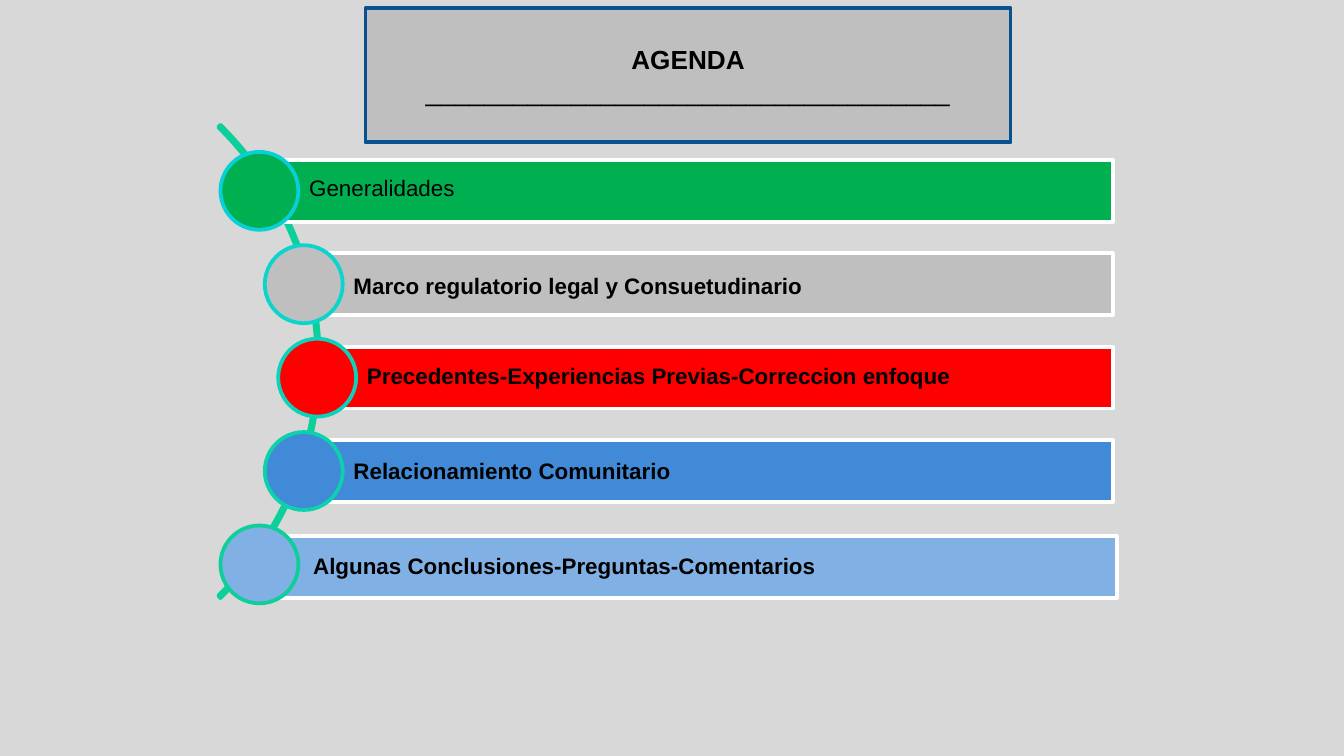
import pptx
import pptx.util
import pptx.dml.color
import pptx.enum.shapes
import pptx.enum.text

Inches = pptx.util.Inches
Pt = pptx.util.Pt
RGBColor = pptx.dml.color.RGBColor
SHAPE = pptx.enum.shapes.MSO_SHAPE
ALIGN = pptx.enum.text.PP_ALIGN

BACKGROUND = RGBColor(0xD8, 0xD8, 0xD8)
BLACK = RGBColor(0x00, 0x00, 0x00)
WHITE = RGBColor(0xFF, 0xFF, 0xFF)
GREEN = RGBColor(0x00, 0xB0, 0x50)
GRAY = RGBColor(0xBF, 0xBF, 0xBF)
RED = RGBColor(0xFF, 0x00, 0x00)
BLUE = RGBColor(0x41, 0x8A, 0xD8)
LIGHT_BLUE = RGBColor(0x81, 0xB0, 0xE4)
NAVY = RGBColor(0x0A, 0x51, 0x90)
ARC_GREEN = RGBColor(0x0D, 0xCF, 0x99)
RING_1 = RGBColor(0x08, 0xD0, 0xD9)
RING_2 = RGBColor(0x0A, 0xD5, 0xCD)
RING_3 = RGBColor(0x0B, 0xD3, 0xBB)
RING_4 = RGBColor(0x0C, 0xD1, 0xAB)
RING_5 = RGBColor(0x0E, 0xCE, 0x99)

deck = pptx.Presentation()
deck.slide_width = Inches(10)
deck.slide_height = deck.slide_width * 9 // 16
slide = deck.slides.add_slide(deck.slide_layouts[6])
slide.background.fill.solid()
slide.background.fill.fore_color.rgb = BACKGROUND


def add_outlined_shape(kind, left, top, width, height, fill, line):
    shape = slide.shapes.add_shape(
        kind, Inches(left), Inches(top), Inches(width), Inches(height))
    shape.shadow.inherit = False
    if fill is None:
        shape.fill.background()
    else:
        shape.fill.solid()
        shape.fill.fore_color.rgb = fill
    shape.line.color.rgb = line
    shape.line.width = Pt(2)
    return shape


def write_text(shape, lines, alignment, insets):
    """Fill the shape with (text, size, bold) lines, one paragraph each."""
    frame = shape.text_frame
    frame.word_wrap = True
    frame.vertical_anchor = pptx.enum.text.MSO_ANCHOR.MIDDLE
    for side, inset in insets.items():
        setattr(frame, f"margin_{side}", Inches(inset))
    for index, (text, size, bold) in enumerate(lines):
        para = frame.add_paragraph() if index else frame.paragraphs[0]
        para.alignment = alignment
        span = para.add_run()
        span.text = text
        font_format = {"name": "Arial", "size": Pt(size), "bold": bold}
        for name, value in font_format.items():
            setattr(span.font, name, value)
        span.font.color.rgb = BLACK


# The arc runs from 315 to 45 degrees around a centre left of the slide.
arc = add_outlined_shape(SHAPE.BLOCK_ARC, -2.62, 0.21, 5, 4.96, None, ARC_GREEN)
for index, value in enumerate((189, 27, 0.005)):
    arc.adjustments[index] = value

# Circle centre, bar shift right and down, label shift down, text, bold, fill, ring
topics = [
    (1.93, 0, 0, -0.01, "Generalidades", False, GREEN, RING_1),
    (2.26, 0, 0, 0.02, "Marco regulatorio legal y Consuetudinario", True,
     GRAY, RING_2),
    (2.36, 0, 0, 0, "Precedentes-Experiencias Previas-Correccion enfoque", True,
     RED, RING_3),
    (2.26, 0, 0, 0.01, "Relacionamiento Comunitario", True, BLUE, RING_4),
    (1.93, 0.03, 0.02, 0, "Algunas Conclusiones-Preguntas-Comentarios", True,
     LIGHT_BLUE, RING_5),
]
FIRST_CENTER = 1.42
ROW_PITCH = 2.78 / (len(topics) - 1)
BAR_RIGHT = 8.28
BAR_HEIGHT = 0.46
CIRCLE = 0.58
LABEL_INSETS = {"left": 0.37, "top": 0.03, "right": 0.03, "bottom": 0.03}

for row, (center, right, down, label_down, text, bold, fill, ring) in enumerate(topics):
    middle = FIRST_CENTER + row * ROW_PITCH
    left = center + right
    top = middle - BAR_HEIGHT / 2 + down
    width = BAR_RIGHT - center
    add_outlined_shape(SHAPE.RECTANGLE, left, top, width, BAR_HEIGHT, fill, WHITE)
    label = slide.shapes.add_textbox(
        Inches(left), Inches(top + label_down), Inches(width), Inches(BAR_HEIGHT))
    write_text(label, [(text, 12, bold)], ALIGN.LEFT, LABEL_INSETS)
    label.text_frame.paragraphs[0].line_spacing = 0.9
    add_outlined_shape(SHAPE.OVAL, center - CIRCLE / 2, middle - CIRCLE / 2,
                       CIRCLE, CIRCLE, fill, ring)

title = add_outlined_shape(SHAPE.RECTANGLE, 2.72, 0.06, 4.8, 1, GRAY, NAVY)
write_text(title, [("AGENDA", 14, True), ("_" * 36, 14, False)], ALIGN.CENTER,
           {"left": 0.1, "top": 0.05, "right": 0.1, "bottom": 0.05})

deck.save("out.pptx")
